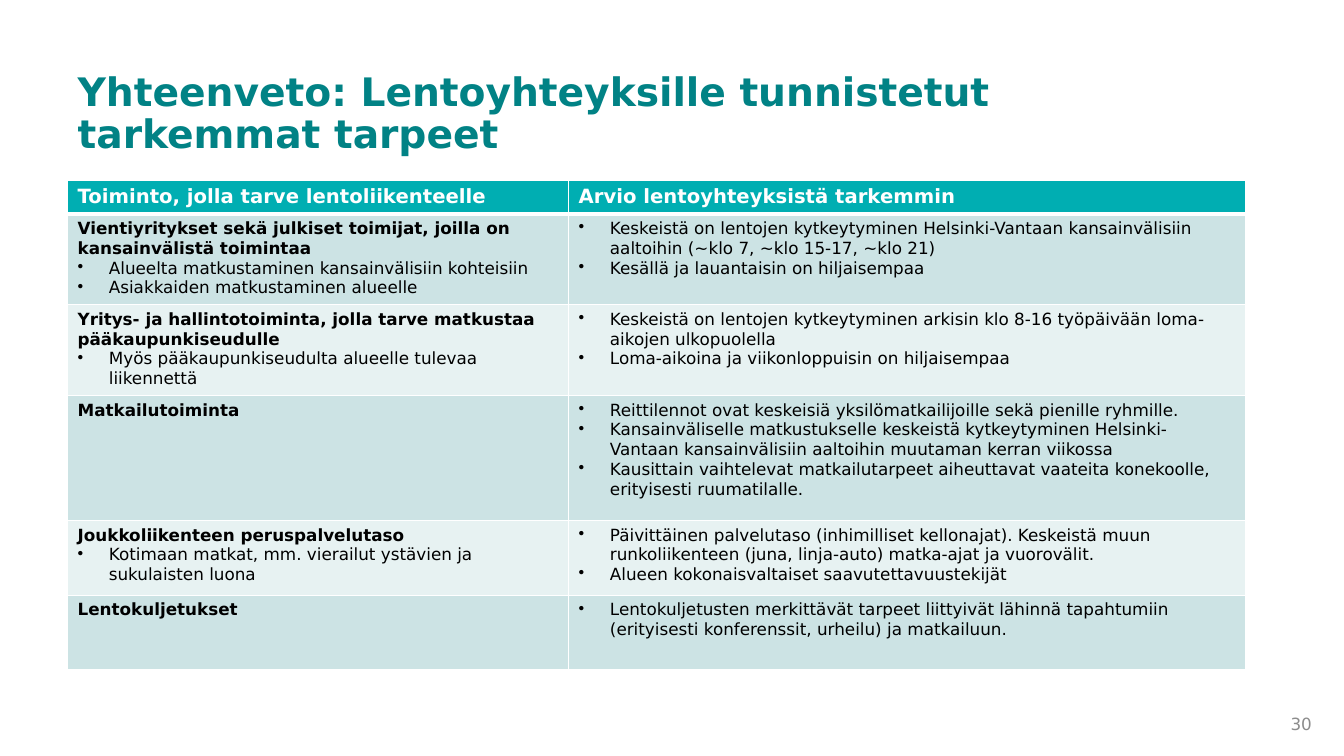
from dataclasses import dataclass

import pptx
import pptx.dml.color
import pptx.enum.text
import pptx.oxml
import pptx.oxml.ns
import pptx.presentation
import pptx.slide
import pptx.table
import pptx.text.text
import pptx.util

Inches = pptx.util.Inches
Pt = pptx.util.Pt
RGBColor = pptx.dml.color.RGBColor
Align = pptx.enum.text.PP_ALIGN
Anchor = pptx.enum.text.MSO_ANCHOR

FONT = "DejaVu Sans"
TITLE_TEAL = RGBColor(0x01, 0x82, 0x85)
HEADER_TEAL = RGBColor(0x00, 0xAE, 0xB2)
BAND_DARK = RGBColor(0xCC, 0xE3, 0xE4)
BAND_LIGHT = RGBColor(0xE7, 0xF2, 0xF2)
WHITE = RGBColor(0xFF, 0xFF, 0xFF)
BLACK = RGBColor(0x00, 0x00, 0x00)
GREY = RGBColor(0x8C, 0x8C, 0x8C)

LEFT = Inches(0.67)
COLUMN_WIDTHS = (4.97, 6.71)
HEADER_HEIGHT = 0.33
BULLET_INDENT = Inches(0.31)
HEADINGS = ("Toiminto, jolla tarve lentoliikenteelle", "Arvio lentoyhteyksistä tarkemmin")


@dataclass(frozen=True)
class Need:
    height: float
    activity: str
    details: tuple[str, ...]
    estimates: tuple[str, ...]


NEEDS = (
    Need(
        0.9,
        "Vientiyritykset sekä julkiset toimijat, joilla on kansainvälistä toimintaa",
        (
            "Alueelta matkustaminen kansainvälisiin kohteisiin",
            "Asiakkaiden matkustaminen alueelle",
        ),
        (
            "Keskeistä on lentojen kytkeytyminen Helsinki-Vantaan kansainvälisiin aaltoihin "
            "(~klo 7, ~klo 15-17, ~klo 21)",
            "Kesällä ja lauantaisin on hiljaisempaa",
        ),
    ),
    Need(
        0.88,
        "Yritys- ja hallintotoiminta, jolla tarve matkustaa pääkaupunkiseudulle",
        ("Myös pääkaupunkiseudulta alueelle tulevaa liikennettä",),
        (
            "Keskeistä on lentojen kytkeytyminen arkisin klo 8-16 työpäivään "
            "loma-aikojen ulkopuolella",
            "Loma-aikoina ja viikonloppuisin on hiljaisempaa",
        ),
    ),
    Need(
        1.24,
        "Matkailutoiminta",
        (),
        (
            "Reittilennot ovat keskeisiä yksilömatkailijoille sekä pienille ryhmille.",
            "Kansainväliselle matkustukselle keskeistä kytkeytyminen Helsinki-Vantaan "
            "kansainvälisiin aaltoihin muutaman kerran viikossa",
            "Kausittain vaihtelevat matkailutarpeet aiheuttavat vaateita konekoolle, "
            "erityisesti ruumatilalle.",
        ),
    ),
    Need(
        0.74,
        "Joukkoliikenteen peruspalvelutaso",
        ("Kotimaan matkat, mm. vierailut ystävien ja sukulaisten luona",),
        (
            "Päivittäinen palvelutaso (inhimilliset kellonajat). Keskeistä muun "
            "runkoliikenteen (juna, linja-auto) matka-ajat ja vuorovälit.",
            "Alueen kokonaisvaltaiset saavutettavuustekijät",
        ),
    ),
    Need(
        0.74,
        "Lentokuljetukset",
        (),
        (
            "Lentokuljetusten merkittävät tarpeet liittyivät lähinnä tapahtumiin "
            "(erityisesti konferenssit, urheilu) ja matkailuun.",
        ),
    ),
)


def write_paragraph(
    frame: pptx.text.text.TextFrame,
    text: str,
    *,
    size: float = 12,
    color: RGBColor = BLACK,
    bold: bool = False,
    bullet: bool = False,
    align: Align = Align.LEFT,
    line_spacing: float = 1.0,
) -> None:
    first = frame.paragraphs[0]
    para = frame.add_paragraph() if first.runs else first
    para.alignment = align
    para.line_spacing = line_spacing
    if bullet:
        properties = para._p.get_or_add_pPr()
        properties.set("marL", str(BULLET_INDENT))
        properties.set("indent", str(-BULLET_INDENT))
        mark = pptx.oxml.parse_xml(f'<a:buChar {pptx.oxml.ns.nsdecls("a")} char="•"/>')
        properties.append(mark)
    span = para.add_run()
    span.text = text
    span.font.name = FONT
    span.font.size = Pt(size)
    span.font.bold = bold
    span.font.color.rgb = color


def format_cell(cell: pptx.table._Cell, fill: RGBColor, top: float, bottom: float) -> None:
    properties = cell._tc.get_or_add_tcPr()
    widths = {"lnL": 1, "lnR": 1, "lnT": top, "lnB": bottom}
    for position, (side, width) in enumerate(widths.items()):
        border = pptx.oxml.parse_xml(
            f'<a:{side} {pptx.oxml.ns.nsdecls("a")} w="{Pt(width)}">'
            f'<a:solidFill><a:srgbClr val="{WHITE}"/></a:solidFill></a:{side}>'
        )
        properties.insert(position, border)
    cell.fill.solid()
    cell.fill.fore_color.rgb = fill


def add_title(page: pptx.slide.Slide) -> None:
    title = page.shapes.title
    title.left, title.top = LEFT, Inches(0.67)
    title.width, title.height = Inches(11.75), Inches(1.21)
    frame = title.text_frame
    frame.word_wrap = True
    frame.auto_size = pptx.enum.text.MSO_AUTO_SIZE.NONE
    frame.vertical_anchor = Anchor.TOP
    write_paragraph(
        frame,
        "Yhteenveto: Lentoyhteyksille tunnistetut tarkemmat tarpeet",
        size=28,
        color=TITLE_TEAL,
        bold=True,
        line_spacing=0.9,
    )


def add_page_number(page: pptx.slide.Slide) -> None:
    box = page.shapes.add_textbox(Inches(12.36), Inches(7.04), Inches(0.75), Inches(0.28))
    box.text_frame.word_wrap = True
    box.text_frame.vertical_anchor = Anchor.MIDDLE
    write_paragraph(box.text_frame, "30", color=GREY, align=Align.RIGHT)


def add_needs_table(page: pptx.slide.Slide) -> None:
    heights = [HEADER_HEIGHT] + [need.height for need in NEEDS]
    table = page.shapes.add_table(
        len(heights),
        len(COLUMN_WIDTHS),
        LEFT,
        Inches(1.79),
        Inches(sum(COLUMN_WIDTHS)),
        Inches(sum(heights)),
    ).table
    for column, width in zip(table.columns, COLUMN_WIDTHS):
        column.width = Inches(width)
    for row, height in zip(table.rows, heights):
        row.height = Inches(height)
    for index, heading in enumerate(HEADINGS):
        cell = table.cell(0, index)
        format_cell(cell, HEADER_TEAL, top=1, bottom=3)
        write_paragraph(cell.text_frame, heading, size=14, color=WHITE, bold=True)
    for number, need in enumerate(NEEDS, start=1):
        activity, estimate = table.cell(number, 0), table.cell(number, 1)
        write_paragraph(activity.text_frame, need.activity, bold=True)
        for cell, points in ((activity, need.details), (estimate, need.estimates)):
            fill = BAND_DARK if number % 2 else BAND_LIGHT
            format_cell(cell, fill, top=3 if number == 1 else 1, bottom=1)
            for point in points:
                write_paragraph(cell.text_frame, point, bullet=True)


def main() -> None:
    deck = pptx.Presentation()
    deck.slide_width, deck.slide_height = Inches(13.33), Inches(7.5)
    page = deck.slides.add_slide(deck.slide_layouts.get_by_name("Title Only"))
    add_title(page)
    add_page_number(page)
    add_needs_table(page)
    deck.save("out.pptx")


if __name__ == "__main__":
    main()
